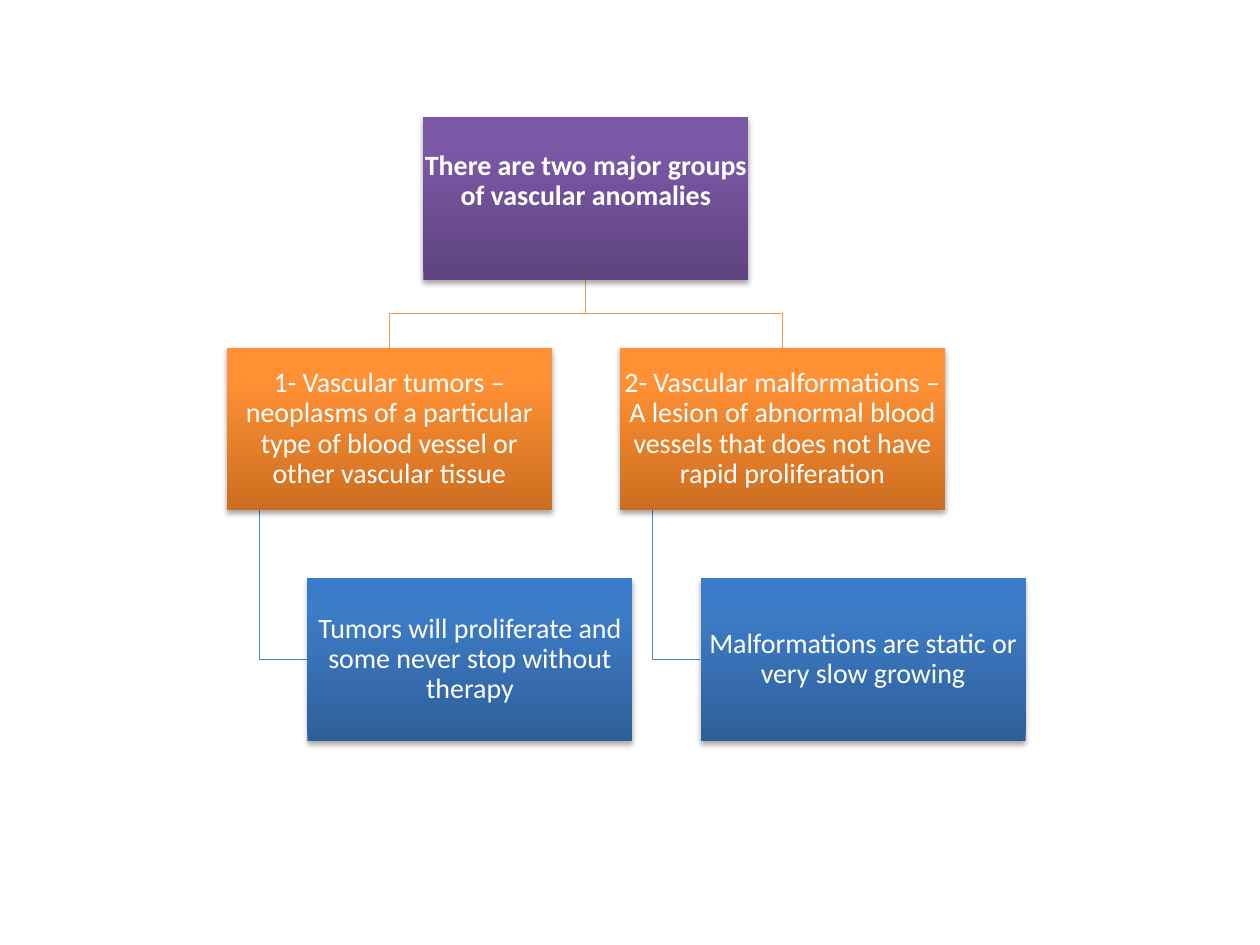
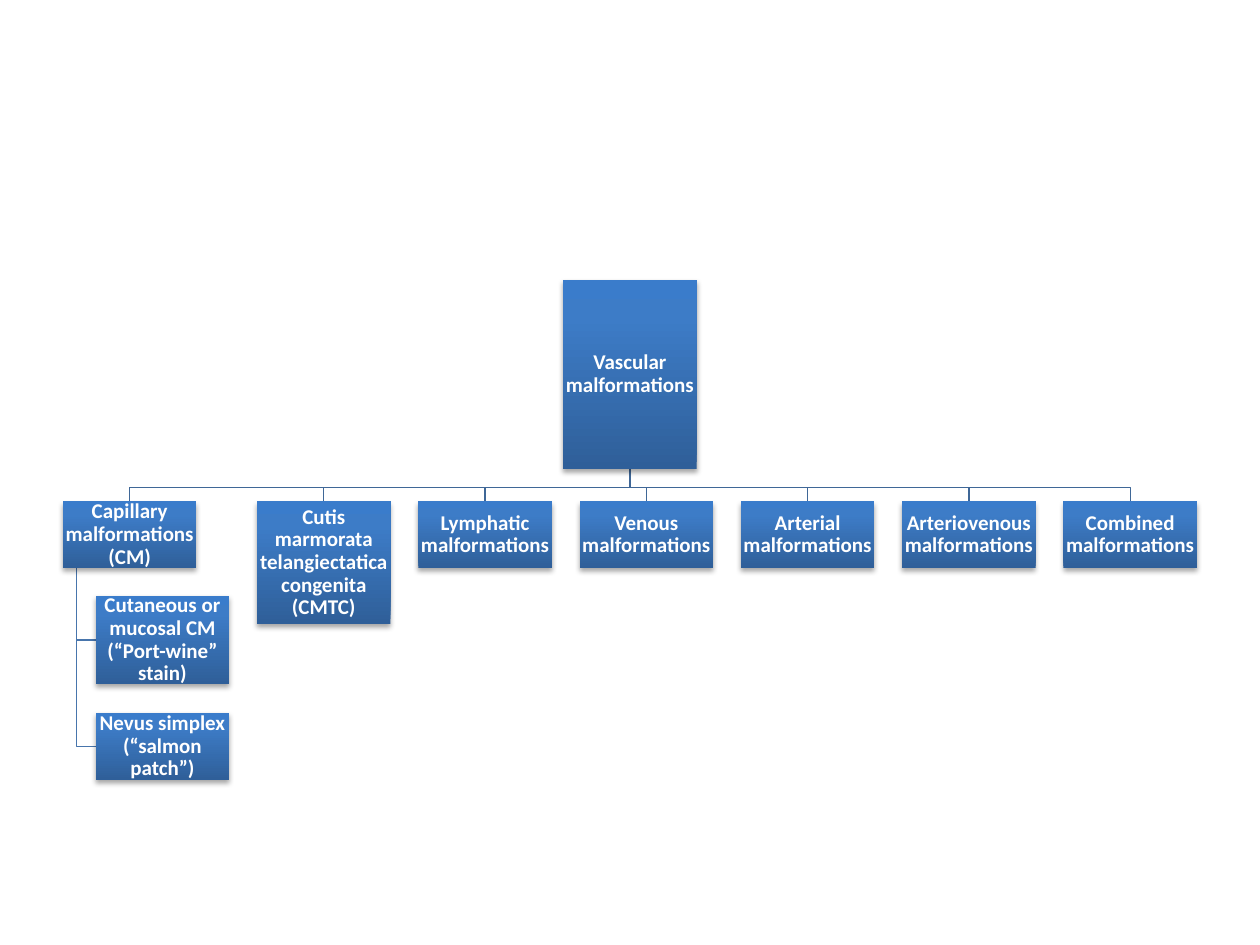
from copy import deepcopy
from dataclasses import dataclass

from lxml import etree
from pptx import Presentation
from pptx.dml.color import RGBColor
from pptx.enum.shapes import MSO_SHAPE
from pptx.enum.text import MSO_ANCHOR, PP_ALIGN
from pptx.oxml.ns import qn
from pptx.util import Inches, Pt

RECTANGLE = MSO_SHAPE.RECTANGLE
MIDDLE = MSO_ANCHOR.MIDDLE
CENTER = PP_ALIGN.CENTER


@dataclass(frozen=True)
class Theme:
    """Colours, type sizes and strokes shared by both charts."""
    font: str = "Calibri"
    text: str = "FFFFFF"
    shadow: str = "000000"
    purple: tuple = ("5F4480", "7B58A6", "7C57A8")
    orange: tuple = ("CC6E20", "FF9034", "FF9136")
    blue: tuple = ("2F5F99", "3D7CC7", "3A7CCB")
    stops: tuple = (0, 0.8, 1)
    orange_link: str = "F79646"
    group_link: str = "4F81BD"
    branch_link: str = "3F6797"
    subtype_link: str = "4875AC"
    group_size: int = 16
    type_size: int = 12
    link_width: float = 0.75
    inset: float = 0.01


THEME = Theme()


@dataclass
class Node:
    """One box of a hierarchy, measured in inches."""
    label: str
    left: float
    top: float
    width: float
    height: float
    shades: tuple = THEME.blue
    size: int = THEME.type_size
    bold: bool = True
    bottom_inset: float = THEME.inset

    @property
    def center(self):
        """Return the horizontal middle."""
        return self.left + self.width / 2

    @property
    def middle(self):
        """Return the vertical middle."""
        return self.top + self.height / 2

    @property
    def bottom(self):
        """Return the lower edge."""
        return self.top + self.height


def apply_gradient(shape, shades):
    """Fill a shape with three shades running from bottom to top."""
    shape.fill.gradient()
    shape.fill.gradient_angle = 90
    stop_list = shape._element.spPr.find(qn("a:gradFill")).find(qn("a:gsLst"))
    stop_list.append(deepcopy(stop_list[0]))
    for stop, position, shade in zip(shape.fill.gradient_stops, THEME.stops, shades):
        stop.position = position
        stop.color.rgb = RGBColor.from_string(shade)


def apply_shadow(shape):
    """Give a shape a soft shadow below."""
    shape.shadow.inherit = False
    effects = shape._element.spPr.find(qn("a:effectLst"))
    shadow = etree.SubElement(effects, qn("a:outerShdw"), blurRad=str(Pt(3.1)),
                              dist=str(Pt(1.8)), dir="5400000", rotWithShape="0")
    color = etree.SubElement(shadow, qn("a:srgbClr"), val=THEME.shadow)
    etree.SubElement(color, qn("a:alpha"), val="35000")


def add_node(slide, node):
    """Draw a labelled box."""
    box = slide.shapes.add_shape(RECTANGLE, Inches(node.left), Inches(node.top),
                                 Inches(node.width), Inches(node.height))
    apply_gradient(box, node.shades)
    box.line.fill.background()
    apply_shadow(box)
    frame = box.text_frame
    frame.word_wrap = True
    frame.vertical_anchor = MIDDLE
    frame.margin_left = frame.margin_right = frame.margin_top = Inches(THEME.inset)
    frame.margin_bottom = Inches(node.bottom_inset)
    frame.text = node.label
    paragraph = frame.paragraphs[0]
    paragraph.alignment = CENTER
    paragraph.line_spacing = 0.9
    font = paragraph.runs[0].font
    font.name = THEME.font
    font.size = Pt(node.size)
    font.bold = node.bold
    font.color.rgb = RGBColor.from_string(THEME.text)


def add_link(slide, points, color):
    """Draw an open bent line through points given in inches."""
    start, *rest = [(Inches(x), Inches(y)) for x, y in points]
    builder = slide.shapes.build_freeform(*start)
    builder.add_line_segments(rest, close=False)
    link = builder.convert_to_shape()
    link.fill.background()
    link.line.color.rgb = RGBColor.from_string(color)
    link.line.width = Pt(THEME.link_width)
    link.shadow.inherit = False


def link_below(slide, parent, child, rise, color):
    """Link a parent to the top of a child, bending at a rise above the child."""
    bend = child.top - rise
    add_link(slide, [(parent.center, parent.bottom), (parent.center, bend),
                     (child.center, bend), (child.center, child.top)], color)


def link_beside(slide, parent, child, color):
    """Link the lower edge of a parent to the left side of a child."""
    stem = parent.left + parent.width / 10
    add_link(slide, [(stem, parent.bottom), (stem, child.middle),
                     (child.left, child.middle)], color)


def build_groups(slide):
    """Show the two major groups with their behaviour."""
    width, height, first_left, pitch = 2.58, 1.29, 1.8, 3.12
    anomalies = Node("There are two major groups of vascular anomalies",
                     first_left + pitch / 2, 0.93, width, height,
                     THEME.purple, THEME.group_size, bottom_inset=0.28)
    labels = [
        ("1- Vascular tumors – neoplasms of a particular type of blood vessel "
         "or other vascular tissue",
         "Tumors will proliferate and some never stop without therapy"),
        ("2- Vascular malformations – A lesion of abnormal blood vessels that "
         "does not have rapid proliferation",
         "Malformations are static or very slow growing"),
    ]
    nodes = [anomalies]
    for column, (group_label, behaviour_label) in enumerate(labels):
        left = first_left + column * pitch
        group = Node(group_label, left, 2.76, width, height,
                     THEME.orange, THEME.group_size, False)
        behaviour = Node(behaviour_label, left + 0.64, 4.59, width, height,
                         THEME.blue, THEME.group_size, False)
        link_below(slide, anomalies, group, 0.27, THEME.orange_link)
        link_beside(slide, group, behaviour, THEME.group_link)
        nodes += [group, behaviour]
    for node in nodes:
        add_node(slide, node)


def build_malformations(slide):
    """Show the types of vascular malformation."""
    width, height, top, pitch = 1.06, 0.53, 3.98, 1.28
    root = Node("Vascular malformations", 4.47, 2.22, width, 1.5)
    capillary = Node("Capillary malformations (CM)", 0.5, top, width, height)
    subtypes = [
        Node("Cutaneous or mucosal CM (“Port-wine” stain)", 0.76, 4.73, width, 0.7),
        Node("Nevus simplex (“salmon patch”)", 0.76, 5.66, width, height),
    ]
    cutis = Node("Cutis marmorata telangiectatica congenita (CMTC)",
                 2.04, top, width, 0.97)
    vessels = ["Lymphatic", "Venous", "Arterial", "Arteriovenous", "Combined"]
    others = [Node(f"{vessel} malformations", cutis.left + column * pitch,
                   top, width, height)
              for column, vessel in enumerate(vessels, start=1)]
    types = [capillary, cutis, *others]
    for kind in types:
        link_below(slide, root, kind, 0.11, THEME.branch_link)
    for subtype in subtypes:
        link_beside(slide, capillary, subtype, THEME.subtype_link)
    for node in [root, *types, *subtypes]:
        add_node(slide, node)


def main():
    """Build both slides and save them."""
    presentation = Presentation()
    presentation.slide_width = Inches(10)
    presentation.slide_height = Inches(7.5)
    blank = presentation.slide_layouts[6]
    for build in (build_groups, build_malformations):
        build(presentation.slides.add_slide(blank))
    presentation.save("out.pptx")


if __name__ == "__main__":
    main()
